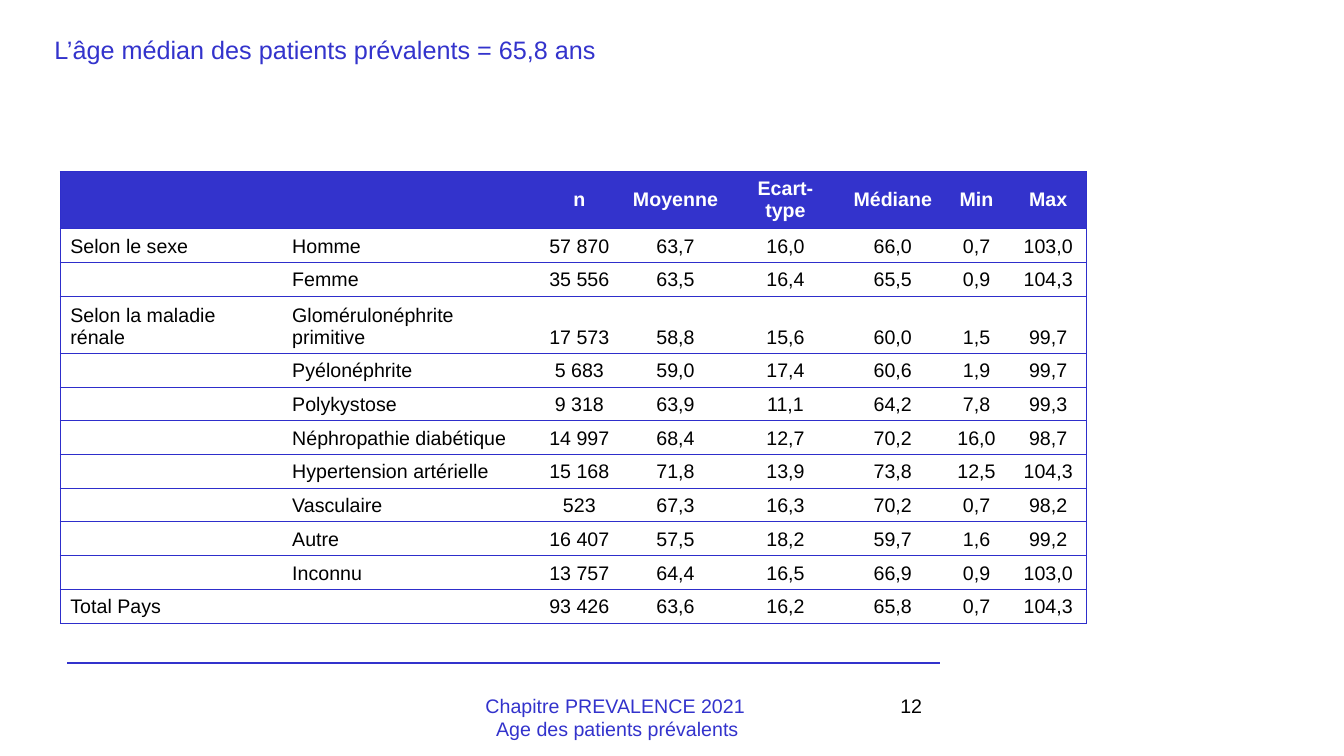
from lxml import etree
from pptx import Presentation
from pptx import util as u
from pptx.dml.color import RGBColor
from pptx.enum import shapes, text
from pptx.oxml import ns

TITLE = "L’âge médian des patients prévalents = 65,8 ans"
FOOTER = ["Chapitre PREVALENCE 2021", " Age des patients prévalents"]
PAGE_NUMBER = "12"
AGES = [
    ("", "", "n", "Moyenne", "Ecart-type", "Médiane", "Min", "Max"),
    ("Selon le sexe", "Homme", "57 870", "63,7", "16,0", "66,0", "0,7", "103,0"),
    ("", "Femme", "35 556", "63,5", "16,4", "65,5", "0,9", "104,3"),
    ("Selon la maladie rénale", "Glomérulonéphrite primitive",
     "17 573", "58,8", "15,6", "60,0", "1,5", "99,7"),
    ("", "Pyélonéphrite", "5 683", "59,0", "17,4", "60,6", "1,9", "99,7"),
    ("", "Polykystose", "9 318", "63,9", "11,1", "64,2", "7,8", "99,3"),
    ("", "Néphropathie diabétique", "14 997", "68,4", "12,7", "70,2", "16,0", "98,7"),
    ("", "Hypertension artérielle", "15 168", "71,8", "13,9", "73,8", "12,5", "104,3"),
    ("", "Vasculaire", "523", "67,3", "16,3", "70,2", "0,7", "98,2"),
    ("", "Autre", "16 407", "57,5", "18,2", "59,7", "1,6", "99,2"),
    ("", "Inconnu", "13 757", "64,4", "16,5", "66,9", "0,9", "103,0"),
    ("Total Pays", "", "93 426", "63,6", "16,2", "65,8", "0,7", "104,3"),
]
COLUMN_WIDTHS = [5.59, 6.4, 2.18, 2.67, 2.87, 2.54, 1.68, 1.93]
ROW_HEIGHT, TALL_ROW_HEIGHT = 0.85, 1.44
TALL_ROWS = (0, 3)
LABEL_COLUMNS = 2
COLORS = {"blue": "3333CC", "border": "2E2ECB", "black": "000000", "white": "FFFFFF"}
NO_STYLE = "{2D5ABB26-0587-4C30-8999-92F81FD0307C}"
ALIGN = text.PP_ALIGN


def rgb(name):
    return RGBColor.from_string(COLORS[name])


def style(para, size, color, align, bold=False):
    para.alignment = align
    font = para.font
    font.name, font.size, font.bold = "Arial", u.Pt(size), bold
    font.color.rgb = rgb(color)


def add_text(page, place, lines, size, color, align):
    frame = page.shapes.add_textbox(*map(u.Cm, place)).text_frame
    frame.word_wrap = True
    frame.text = "\n".join(lines)
    for para in frame.paragraphs:
        style(para, size, color, align)


def add_border(cell, side):
    properties = cell._tc.get_or_add_tcPr()
    line = etree.SubElement(properties, ns.qn(f"a:ln{side}"), w=str(u.Pt(0.75)))
    fill = etree.SubElement(line, ns.qn("a:solidFill"))
    etree.SubElement(fill, ns.qn("a:srgbClr"), val=COLORS["border"])


def fill_cell(cell, words, row, column):
    header = row == 0
    sides = "L" * (column == 0) + "R" * (column == len(COLUMN_WIDTHS) - 1) + "TB"
    for side in sides:
        add_border(cell, side)
    cell.fill.solid()
    cell.fill.fore_color.rgb = rgb("blue" if header else "white")
    anchors = text.MSO_ANCHOR
    cell.vertical_anchor = anchors.MIDDLE if header else anchors.BOTTOM
    cell.text = words
    para = cell.text_frame.paragraphs[0]
    style(para, 14, "white" if header else "black",
          ALIGN.LEFT if column < LABEL_COLUMNS else ALIGN.CENTER, header)
    if not words:
        etree.SubElement(para._p, ns.qn("a:endParaRPr"), sz="1400")


def add_age_table(page):
    heights = [TALL_ROW_HEIGHT if row in TALL_ROWS else ROW_HEIGHT
               for row in range(len(AGES))]
    size = map(u.Cm, (1.52, 4.32, sum(COLUMN_WIDTHS), sum(heights)))
    table = page.shapes.add_table(len(AGES), len(COLUMN_WIDTHS), *size).table
    table.horz_banding = table.first_row = False
    table._tbl.tblPr.find(ns.qn("a:tableStyleId")).text = NO_STYLE
    for column, width in zip(table.columns, COLUMN_WIDTHS):
        column.width = u.Cm(width)
    for row, height in zip(table.rows, heights):
        row.height = u.Cm(height)
    for row, values in enumerate(AGES):
        for column, words in enumerate(values):
            fill_cell(table.cell(row, column), words, row, column)


def add_footer_line(page):
    ends = map(u.Cm, (1.7, 16.71, 23.7, 16.71))
    rule = page.shapes.add_connector(shapes.MSO_CONNECTOR.STRAIGHT, *ends)
    rule.line.color.rgb = rgb("blue")
    rule.line.width = u.Pt(1)
    etree.SubElement(rule._element.spPr, ns.qn("a:effectLst"))


def main():
    """Build the slide on the age of prevalent patients."""
    deck = Presentation()
    deck.slide_width, deck.slide_height = u.Cm(33.87), u.Cm(19.05)
    page = deck.slides.add_slide(deck.slide_layouts[6])
    add_footer_line(page)
    add_text(page, (18.21, 17.35, 5.28, 1.27), [PAGE_NUMBER], 14, "black", ALIGN.RIGHT)
    add_text(page, (8.71, 17.35, 13.59, 1.27), FOOTER, 14, "blue", ALIGN.CENTER)
    add_text(page, (1.12, 0.74, 23.39, 1.02), [TITLE], 18, "blue", ALIGN.JUSTIFY)
    add_age_table(page)
    deck.save("out.pptx")


if __name__ == "__main__":
    main()
